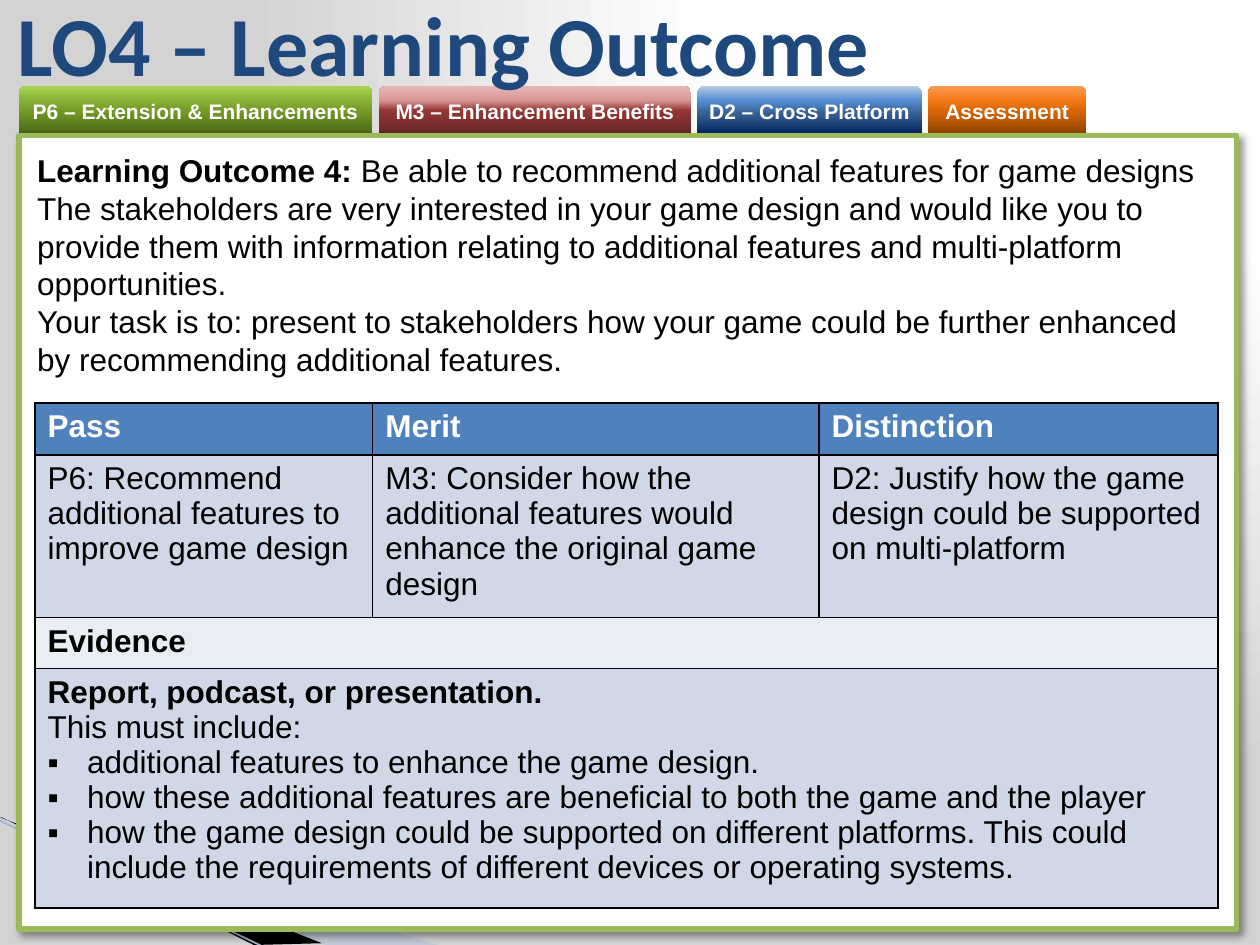
from lxml import etree
from pptx import Presentation
from pptx.dml.color import RGBColor
from pptx.enum.shapes import MSO_CONNECTOR, MSO_SHAPE
from pptx.enum.text import MSO_ANCHOR, PP_ALIGN
from pptx.oxml import parse_xml
from pptx.oxml.ns import nsdecls, qn
from pptx.util import Pt

BLACK, WHITE = RGBColor(0, 0, 0), RGBColor(255, 255, 255)
NAVY = RGBColor(0x1F, 0x49, 0x7D)
GREEN = RGBColor(0x9B, 0xBB, 0x59)
HEADER = RGBColor(0x4F, 0x81, 0xBD)
BAND = RGBColor(0xD0, 0xD8, 0xE8)
PALE = RGBColor(0xE9, 0xED, 0xF4)
SWEEP = RGBColor(0xA7, 0xB9, 0xDB)
SWEEP_LINE = RGBColor(0x9E, 0xB3, 0xD6)

TITLE = "LO4 – Learning Outcome"
BACKDROP = [(0, "FFFFFF"), (40, "FFFFFF"), (100, "D3D3D3")]
TABS = [
    ("P6 – Extension & Enhancements", 202.3,
     [(0, "4A6316"), (50, "769C27"), (70, "89B137"), (100, "A9D651")]),
    ("M3 – Enhancement Benefits", 178.6,
     [(0, "632523"), (50, "953735"), (70, "D99694"), (100, "E6B9B8")]),
    ("D2 – Cross Platform", 128.2,
     [(0, "002060"), (44, "376092"), (70, "558ED5"), (100, "B9CDE5")]),
    ("Assessment", 90.7,
     [(0, "8B3F00"), (50, "DA6606"), (70, "F47917"), (100, "FF9C54")]),
]
INTRO = [
    [("Learning Outcome 4: ", True),
     ("Be able to recommend additional features for game designs", False)],
    [("The stakeholders are very interested in your game design and would like you to "
      "provide them with information relating to additional features and multi-platform "
      "opportunities.", False)],
    [("Your task is to: present to stakeholders how your game could be further enhanced "
      "by recommending additional features.", False)],
]
COLUMNS = [193, 255, 228]
ROWS = [
    (29.5, HEADER, WHITE, True, [["Pass"], ["Merit"], ["Distinction"]]),
    (93, BAND, BLACK, False, [
        ["P6: Recommend additional features to improve game design"],
        ["M3: Consider how the additional features would enhance the original game design"],
        ["D2: Justify how the game design could be supported on multi-platform"]]),
    (29, PALE, BLACK, True, [["Evidence"]]),
    (137, BAND, BLACK, False, [[
        "Report, podcast, or presentation.",
        "This must include:",
        "▪additional features to enhance the game design.",
        "▪how these additional features are beneficial to both the game and the player",
        "▪how the game design could be supported on different platforms. This could "
        "include the requirements of different devices or operating systems."]]),
]
BOLD_LINE = "Report, podcast, or presentation."


def gradient(stops, direction):
    items = "".join(f'<a:gs pos="{pos * 1000}"><a:srgbClr val="{color}"/></a:gs>'
                    for pos, color in stops)
    return (f'<a:gradFill {nsdecls("a")} rotWithShape="1"><a:gsLst>{items}</a:gsLst>'
            f'{direction}</a:gradFill>')


def add_run(p, text, size, color, bold, font="Arial"):
    r = p.add_run()
    r.text = text
    f = r.font
    f.name, f.size, f.bold, f.color.rgb = font, Pt(size), bold, color


def add_box(s, left, top, width, height, anchor=MSO_ANCHOR.TOP):
    tf = s.shapes.add_textbox(Pt(left), Pt(top), Pt(width), Pt(height)).text_frame
    tf.word_wrap = True
    tf.vertical_anchor = anchor
    return tf


def paragraphs(tf, items):
    for i, item in enumerate(items):
        yield (tf.add_paragraph() if i else tf.paragraphs[0]), item


def add_sweep(s, points, color):
    fb = s.shapes.build_freeform(*points[0], scale=Pt(1))
    fb.add_line_segments(points[1:], close=True)
    sp = fb.convert_to_shape()
    sp.shadow.inherit = False
    sp.fill.solid()
    sp.fill.fore_color.rgb = color
    sp.line.fill.background()
    return sp


def add_background(s):
    bg = parse_xml(
        f'<p:bg {nsdecls("p", "a")}><p:bgPr>'
        + gradient(BACKDROP, '<a:path path="circle"><a:fillToRect l="65000" t="0" '
                             'r="0" b="98000"/></a:path>')
        + '<a:effectLst/></p:bgPr></p:bg>')
    s.element.cSld.insert(0, bg)
    pale = add_sweep(s, [(-0.7, 468), (251.3, 540), (186.5, 540), (-0.7, 467.3)], SWEEP)
    color = pale.fill._xPr.find(qn("a:solidFill"))[0]
    etree.SubElement(color, qn("a:alpha"), val="40000")
    add_sweep(s, [(0, 466.6), (184.3, 539.3), (145.4, 540), (0.7, 467.3)], BLACK)
    line = s.shapes.add_connector(MSO_CONNECTOR.STRAIGHT, Pt(-0.7), Pt(468.7), Pt(150.5), Pt(541))
    line.line.color.rgb = SWEEP_LINE
    line.line.width = Pt(0.95)
    etree.SubElement(line._element.spPr, qn("a:effectLst"))


def add_tabs(s, left=10.6, top=49, height=28, gap=3.5):
    for label, width, stops in TABS:
        sp = s.shapes.add_shape(MSO_SHAPE.ROUND_2_SAME_RECTANGLE,
                                Pt(left), Pt(top), Pt(width), Pt(height))
        sp.shadow.inherit = False
        sp.line.fill.background()
        sp.fill.background()
        spPr = sp._element.spPr
        spPr.replace(spPr.find(qn("a:noFill")),
                     parse_xml(gradient(stops, '<a:lin ang="16200000" scaled="0"/>')))
        tf = sp.text_frame
        tf.margin_left = tf.margin_right = tf.margin_top = tf.margin_bottom = 0
        tf.vertical_anchor = MSO_ANCHOR.MIDDLE
        p = tf.paragraphs[0]
        p.alignment = PP_ALIGN.CENTER
        add_run(p, label, 12, WHITE, True)
        left += width + gap


def add_panel(s):
    sp = s.shapes.add_shape(MSO_SHAPE.RECTANGLE, Pt(10.8), Pt(77.5), Pt(696), Pt(453.5))
    sp.fill.solid()
    sp.fill.fore_color.rgb = WHITE
    sp.line.color.rgb = GREEN
    sp.line.width = Pt(3)
    sp._element.spPr.append(parse_xml(
        f'<a:effectLst {nsdecls("a")}><a:outerShdw blurRad="{Pt(4)}" dist="{Pt(3)}" '
        'dir="2700000" algn="tl" rotWithShape="0"><a:srgbClr val="000000">'
        '<a:alpha val="40000"/></a:srgbClr></a:outerShdw></a:effectLst>'))


def style_cell(cell, fill):
    tcPr = cell._tc.get_or_add_tcPr()
    for side in ("lnL", "lnR", "lnT", "lnB"):
        tcPr.append(parse_xml(
            f'<a:{side} {nsdecls("a")} w="{Pt(1)}"><a:solidFill><a:srgbClr val="{BLACK}"/>'
            f'</a:solidFill></a:{side}>'))
    cell.fill.solid()
    cell.fill.fore_color.rgb = fill


def add_criteria(s):
    table = s.shapes.add_table(len(ROWS), len(COLUMNS), Pt(20), Pt(230.4), Pt(sum(COLUMNS)),
                               Pt(sum(row[0] for row in ROWS))).table
    for column, width in zip(table.columns, COLUMNS):
        column.width = Pt(width)
    for i, (height, fill, color, bold, cells) in enumerate(ROWS):
        table.rows[i].height = Pt(height)
        for j in range(len(COLUMNS)):
            style_cell(table.cell(i, j), fill)
        if len(cells) == 1:
            table.cell(i, 0).merge(table.cell(i, len(COLUMNS) - 1))
        for j, lines in enumerate(cells):
            for p, text in paragraphs(table.cell(i, j).text_frame, lines):
                p.line_spacing = Pt(20.1)
                if text.startswith("▪"):
                    pPr = p._p.get_or_add_pPr()
                    pPr.set("marL", str(Pt(22.5)))
                    pPr.set("indent", str(-Pt(22.5)))
                    etree.SubElement(pPr, qn("a:buFont"), typeface="Arial")
                    etree.SubElement(pPr, qn("a:buChar"), char="▪")
                add_run(p, text.lstrip("▪"), 18, color, bold or text == BOLD_LINE)


def main():
    prs = Presentation()
    prs.slide_width, prs.slide_height = Pt(720), Pt(540)
    s = prs.slides.add_slide(prs.slide_layouts[6])
    add_background(s)
    add_tabs(s)
    add_panel(s)
    title = add_box(s, 3, 0, 607, 49, MSO_ANCHOR.MIDDLE)
    add_run(title.paragraphs[0], TITLE, 48, NAVY, True, "Calibri")
    intro = add_box(s, 14.2, 82.8, 681, 138)
    for p, runs in paragraphs(intro, INTRO):
        p.line_spacing = Pt(21.6)
        for text, bold in runs:
            add_run(p, text, 18, BLACK, bold)
    add_criteria(s)
    prs.save("out.pptx")


if __name__ == "__main__":
    main()
